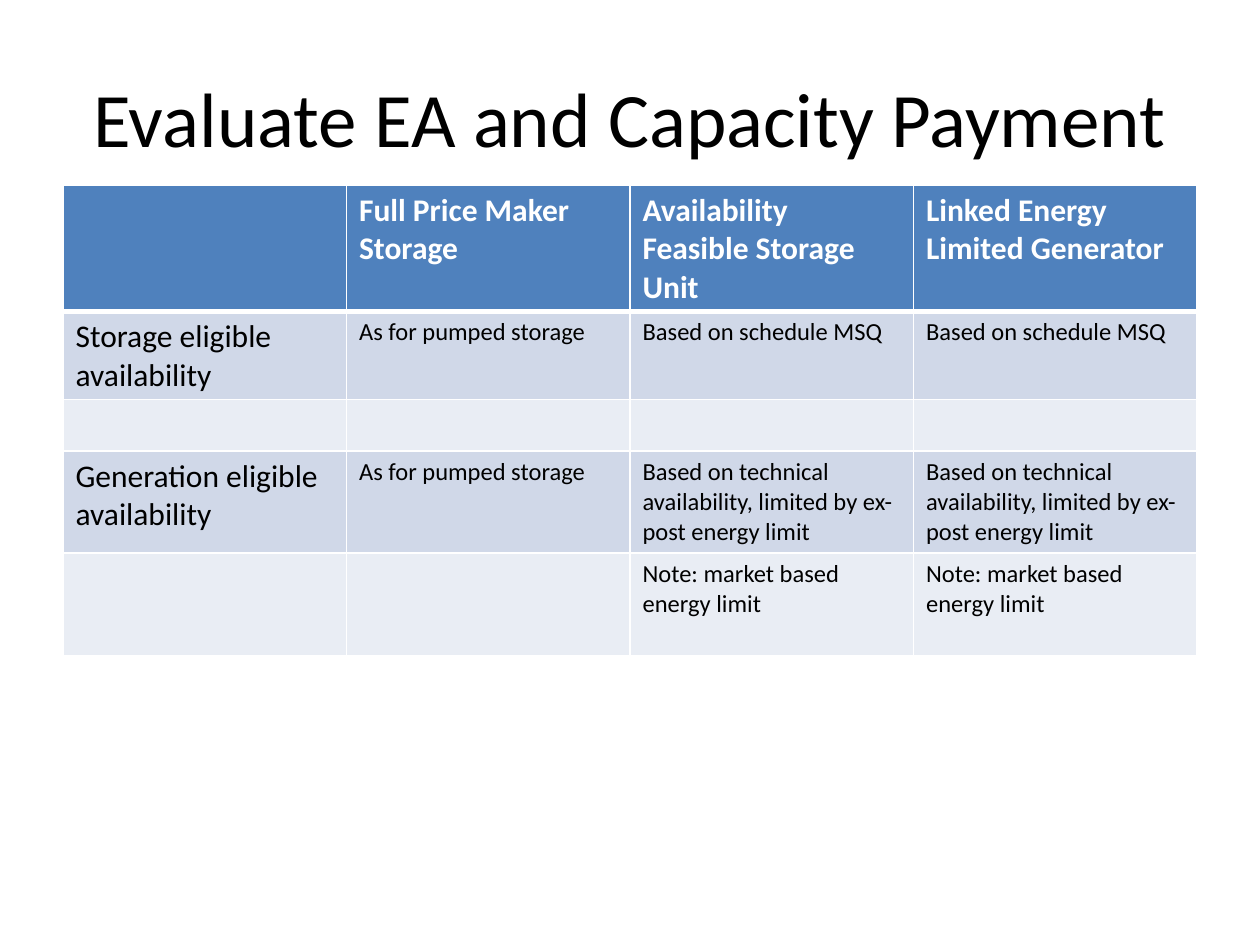
from dataclasses import dataclass

from lxml.etree import SubElement
from pptx import Presentation
from pptx.dml.color import RGBColor
from pptx.enum.text import MSO_ANCHOR as Anchor, PP_ALIGN as Align
from pptx.oxml.ns import qn
from pptx.table import _Cell as Cell
from pptx.text.text import _Paragraph as Paragraph
from pptx.util import Inches, Pt

BLACK = RGBColor(0x00, 0x00, 0x00)
WHITE = RGBColor(0xFF, 0xFF, 0xFF)
HEADER_BLUE = RGBColor(0x4F, 0x81, 0xBD)
BAND_DARK = RGBColor(0xD0, 0xD8, 0xE8)
BAND_LIGHT = RGBColor(0xE9, 0xED, 0xF4)

TITLE_FORMAT = {"name": "Calibri", "size": Pt(44), "bold": False}
HEADER_FORMAT = {"name": "Calibri", "size": Pt(18), "bold": True}
LABEL_FORMAT = {"name": "Calibri", "size": Pt(18), "bold": False}
DETAIL_FORMAT = {"name": "Calibri", "size": Pt(14), "bold": False}

COLUMN_WIDTH = 2.25
THIN, THICK = Pt(1), Pt(3)


@dataclass(frozen=True)
class TableRow:
    """Texts, height in inches and fill of one table row."""

    texts: tuple[str, ...]
    height: float
    fill: RGBColor


SCHEDULE = "Based on schedule MSQ"
TECHNICAL = "Based on technical availability, limited by ex-post energy limit"
NOTE = "Note: market based energy limit"
PUMPED = "As for pumped storage"

ROWS = (
    TableRow(
        (
            "",
            "Full Price Maker Storage",
            "Availability Feasible Storage Unit",
            "Linked Energy Limited Generator",
        ),
        1.0,
        HEADER_BLUE,
    ),
    TableRow(("Storage eligible availability", PUMPED, SCHEDULE, SCHEDULE), 0.7, BAND_DARK),
    TableRow(("", "", "", ""), 0.41, BAND_LIGHT),
    TableRow(("Generation eligible availability", PUMPED, TECHNICAL, TECHNICAL), 0.81, BAND_DARK),
    TableRow(("", "", NOTE, NOTE), 0.81, BAND_LIGHT),
)


def write_text(paragraph: Paragraph, text: str, font_format: dict, color: RGBColor) -> None:
    """Put formatted text into a paragraph."""
    paragraph.text = text
    for name, value in font_format.items():
        setattr(paragraph.font, name, value)
    paragraph.font.color.rgb = color


def set_borders(cell: Cell, widths: dict[str, int]) -> None:
    """Draw white borders of the given widths ahead of the cell fill."""
    properties = cell._tc.get_or_add_tcPr()
    for side, width in widths.items():
        line = SubElement(properties, qn(f"a:{side}"), w=str(width))
        fill = SubElement(line, qn("a:solidFill"))
        SubElement(fill, qn("a:srgbClr"), val=str(WHITE))


def fill_cell(cell: Cell, row: TableRow, row_index: int, column_index: int) -> None:
    """Write and style one table cell."""
    is_header = row_index == 0
    top = THICK if row_index == 1 else THIN
    bottom = THICK if is_header else THIN
    set_borders(cell, {"lnL": THIN, "lnR": THIN, "lnT": top, "lnB": bottom})
    cell.fill.solid()
    cell.fill.fore_color.rgb = row.fill
    text = row.texts[column_index]
    if text:
        body_format = DETAIL_FORMAT if column_index else LABEL_FORMAT
        font_format = HEADER_FORMAT if is_header else body_format
        color = WHITE if is_header else BLACK
        write_text(cell.text_frame.paragraphs[0], text, font_format, color)


def add_title(slide, text: str) -> None:
    """Add the centred slide title."""
    shape = slide.shapes.add_textbox(Inches(0.5), Inches(0.3), Inches(9), Inches(1.25))
    frame = shape.text_frame
    frame.word_wrap = True
    frame.vertical_anchor = Anchor.MIDDLE
    paragraph = frame.paragraphs[0]
    paragraph.alignment = Align.CENTER
    write_text(paragraph, text, TITLE_FORMAT, BLACK)


def add_comparison_table(slide, rows: tuple[TableRow, ...]) -> None:
    """Add the table comparing the storage options."""
    column_count = len(rows[0].texts)
    table = slide.shapes.add_table(
        len(rows),
        column_count,
        Inches(0.5),
        Inches(1.47),
        Inches(COLUMN_WIDTH * column_count),
        Inches(sum(row.height for row in rows)),
    ).table
    for column in table.columns:
        column.width = Inches(COLUMN_WIDTH)
    for row_index, row in enumerate(rows):
        table.rows[row_index].height = Inches(row.height)
        for column_index in range(column_count):
            fill_cell(table.cell(row_index, column_index), row, row_index, column_index)


def main() -> None:
    """Build and save the slide."""
    presentation = Presentation()
    presentation.slide_width = Inches(10)
    presentation.slide_height = Inches(7.5)
    slide = presentation.slides.add_slide(presentation.slide_layouts[6])
    add_title(slide, "Evaluate EA and Capacity Payment")
    add_comparison_table(slide, ROWS)
    presentation.save("out.pptx")


if __name__ == "__main__":
    main()
